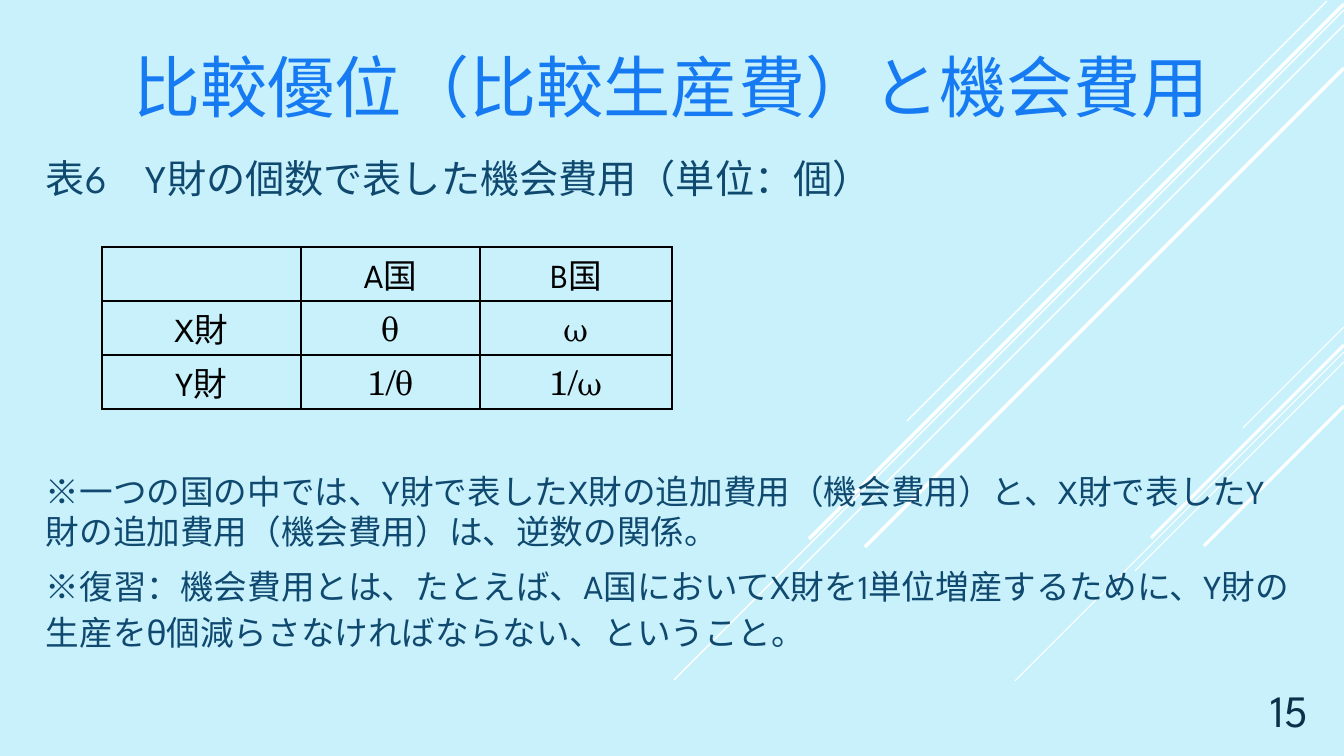
"""Build the slide on comparative advantage and opportunity cost."""
from lxml.etree import SubElement
from pptx import Presentation
from pptx.dml.color import RGBColor
from pptx.enum.text import MSO_ANCHOR, PP_ALIGN
from pptx.oxml.ns import qn
from pptx.util import Pt

SANS, SERIF = "League Spartan", "TeX Gyre Schola"
SKY = RGBColor(0xC8, 0xF1, 0xFB)
BLUE = RGBColor(0x16, 0x7B, 0xF3)
NAVY = RGBColor(0x0F, 0x49, 0x6F)
DARK = RGBColor(0x0A, 0x30, 0x4A)
WHITE = RGBColor(0xFF, 0xFF, 0xFF)
BLACK = RGBColor(0, 0, 0)

TITLE = "比較優位（比較生産費）と機会費用"
CAPTION = "表6\u3000Y財の個数で表した機会費用（単位：個）"
NOTES = [
    "※一つの国の中では、Y財で表したX財の追加費用（機会費用）と、X財で表したY財の追加費用（機会費用）は、逆数の関係。",
    "※復習：機会費用とは、たとえば、A国においてX財を1単位増産するために、Y財の生産をθ個減らさなければならない、ということ。",
]
COSTS = [["", "A国", "B国"], ["X財", "θ", "ω"], ["Y財", "1/θ", "1/ω"]]
COL_WIDTHS = [199, 179, 192]
ROW_HEIGHT = 54

# start x, start y, run down-left, weight
DIAGONALS = [
    (1344, 327, 101, 0.75), (1344, 352, 329, 0.75), (1344, 362, 209, 0.75),
    (1344, 345, 193, 2.25), (1344, 406, 140, 2.25),
    (1327, 1, 420, 1), (1344, 10, 670, 1), (1344, 25, 546, 1),
    (1344, 4, 535, 2.5), (1344, 68, 479, 2.5),
]


def px(n):
    return round(n * 914400 / 100.8)


def set_font(p, size, color, name=SANS):
    p.font.size, p.font.name, p.font.color.rgb = Pt(size), name, color


def add_text(s, box, lines, size, color, align=PP_ALIGN.LEFT, anchor=MSO_ANCHOR.TOP):
    tf = s.shapes.add_textbox(*map(px, box)).text_frame
    tf.word_wrap, tf.vertical_anchor = True, anchor
    for i, line in enumerate(lines):
        p = tf.add_paragraph() if i else tf.paragraphs[0]
        p.text, p.alignment, p.space_after = line, align, Pt(6 if len(lines) > 1 else 0)
        set_font(p, size, color)
    return tf


def add_diagonal(s, x, y, run, weight):
    line = s.shapes.add_connector(1, px(x), px(y), px(x - run), px(y + run))
    line.line.color.rgb, line.line.width = WHITE, Pt(weight)
    SubElement(line._element.spPr, qn("a:effectLst"))


def add_borders(cell):
    tcPr = cell._tc.get_or_add_tcPr()
    for i, side in enumerate(("lnL", "lnR", "lnT", "lnB")):
        ln = tcPr.makeelement(qn(f"a:{side}"), {"w": str(Pt(1))})
        fill = SubElement(ln, qn("a:solidFill"))
        SubElement(fill, qn("a:srgbClr"), val=str(BLACK))
        tcPr.insert(i, ln)


def add_costs(s, x, y):
    size = px(sum(COL_WIDTHS)), px(ROW_HEIGHT * len(COSTS))
    table = s.shapes.add_table(len(COSTS), len(COL_WIDTHS), px(x), px(y), *size).table
    table.first_row = table.horz_banding = False
    for col, width in zip(table.columns, COL_WIDTHS):
        col.width = px(width)
    for r, row in enumerate(COSTS):
        table.rows[r].height = px(ROW_HEIGHT)
        for c, text in enumerate(row):
            cell = table.cell(r, c)
            cell.text, cell.vertical_anchor = text, MSO_ANCHOR.MIDDLE
            cell.margin_left = cell.margin_right = px(7)
            cell.margin_top = cell.margin_bottom = 0
            cell.fill.background()
            add_borders(cell)
            p = cell.text_frame.paragraphs[0]
            p.alignment = PP_ALIGN.CENTER
            set_font(p, 24, BLACK, SERIF if r and c else SANS)


def main():
    prs = Presentation()
    prs.slide_width, prs.slide_height = px(1344), px(756)
    s = prs.slides.add_slide(prs.slide_layouts[6])
    s.background.fill.solid()
    s.background.fill.fore_color.rgb = SKY
    for diagonal in DIAGONALS:
        add_diagonal(s, *diagonal)
    add_text(s, (36, 36, 1270, 95), [TITLE], 48, BLUE, PP_ALIGN.CENTER, MSO_ANCHOR.BOTTOM)
    add_text(s, (36, 149, 1270, 60), [CAPTION], 28, NAVY)
    notes = add_text(s, (36, 466, 1270, 203), NOTES, 24, NAVY)
    notes.paragraphs[1].line_spacing = Pt(33)
    add_text(s, (1242, 679, 76, 62), ["15"], 32, DARK, PP_ALIGN.RIGHT, MSO_ANCHOR.BOTTOM)
    add_costs(s, 102, 247)
    prs.save("out.pptx")


if __name__ == "__main__":
    main()
